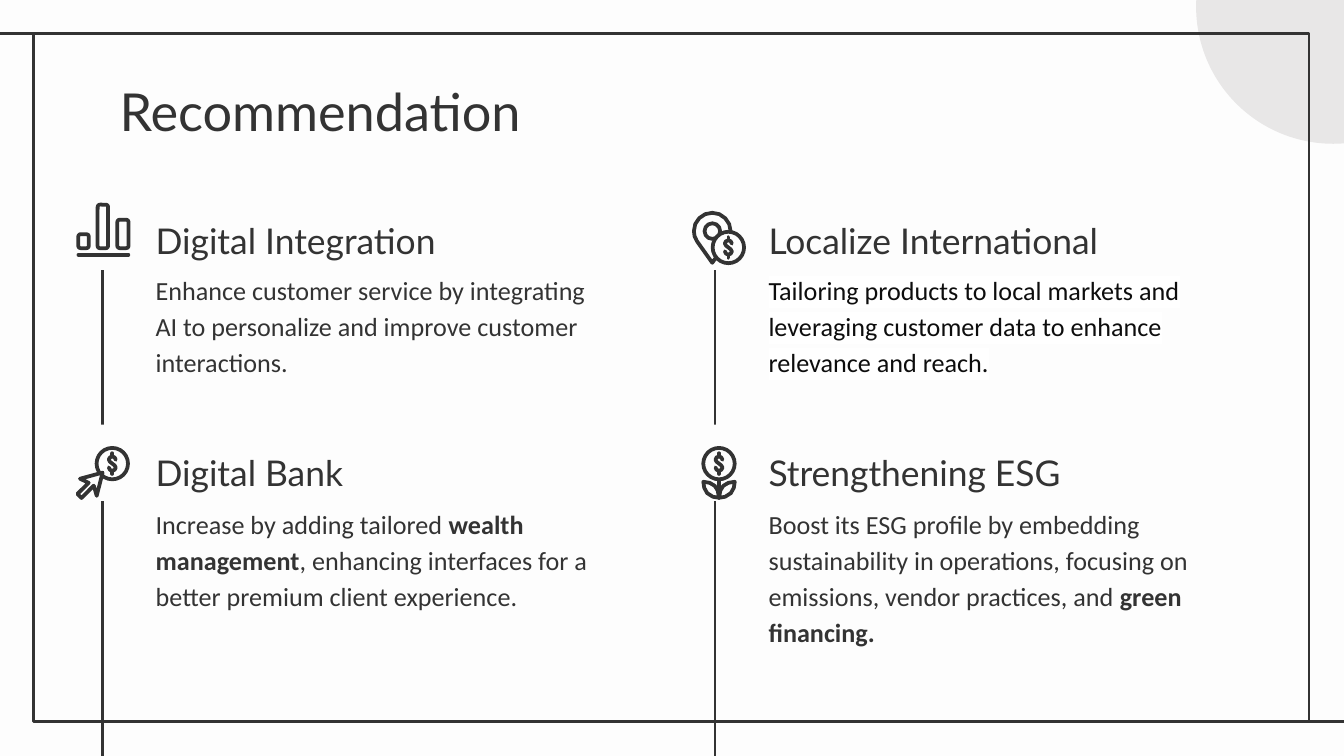
import pptx
import pptx.dml.color
import pptx.enum.shapes
import pptx.enum.text
import pptx.oxml.ns
import pptx.util
from lxml import etree

PX = 9144  # EMU in one px: 100 px make an inch
CELL = PX // 10  # icons are drawn in tenths of a px
WIDTH = 1000
HEIGHT = WIDTH * 9 / 16
COLORS = {"ink": "333333", "paper": "FDFDFD", "corner": "E8E7E7",
          "dark": "0D0D0D", "white": "FFFFFF"}
SHAPE = pptx.enum.shapes.MSO_SHAPE
ANCHOR = pptx.enum.text.MSO_ANCHOR
COIN_RADIUS = 117
DOLLAR_CURVE = [(26, -28), (18, -46), (0, -54), (-18, -46), (-26, -30), (-18, -14), (0, 0),
                (18, 14), (26, 30), (18, 46), (0, 54), (-18, 46), (-26, 28)]


def emu(*lengths):
    return [pptx.util.Emu(round(length * PX)) for length in lengths]


def rgb(name):
    return pptx.dml.color.RGBColor.from_string(COLORS[name])


def tag(name):
    return pptx.oxml.ns.qn(name)


def paint(shape, fill=None, line=None, weight=1.5):
    shape.shadow.inherit = False
    if fill:
        shape.fill.solid()
        shape.fill.fore_color.rgb = rgb(fill)
    else:
        shape.fill.background()
    if line:
        shape.line.color.rgb = rgb(line)
        shape.line.width = pptx.util.Pt(weight)
    else:
        shape.line.fill.background()


def add_line(page, x1, y1, x2, y2):
    line = page.shapes.add_connector(pptx.enum.shapes.MSO_CONNECTOR.STRAIGHT,
                                     *emu(x1, y1, x2, y2))
    line.line.color.rgb = rgb("ink")
    line.line.width = pptx.util.Pt(1.5)
    etree.SubElement(line._element.spPr, tag("a:effectLst"))


def write(box, text, font, size, color="ink", spacing=1.0, anchor=ANCHOR.TOP, highlight=None):
    """Fill a box with one paragraph; text between ** marks is bold."""
    frame = box.text_frame
    frame.word_wrap = True
    frame.auto_size = pptx.enum.text.MSO_AUTO_SIZE.NONE
    frame.vertical_anchor = anchor
    frame.margin_left = frame.margin_right = frame.margin_top = frame.margin_bottom = emu(10)[0]
    para = frame.paragraphs[0]
    para.alignment = pptx.enum.text.PP_ALIGN.LEFT
    para.line_spacing = spacing
    for index, part in enumerate(text.split("**")):
        if not part:
            continue
        span = para.add_run()
        span.text = part
        span.font.name = font
        span.font.size = pptx.util.Pt(size)
        span.font.bold = index % 2 == 1
        span.font.color.rgb = rgb(color)
        if highlight:
            mark = etree.Element(tag("a:highlight"))
            etree.SubElement(mark, tag("a:srgbClr"), val=COLORS[highlight])
            span._r.rPr.find(tag("a:latin")).addprevious(mark)


def add_text(page, x, y, width, height, text, **style):
    write(page.shapes.add_textbox(*emu(x, y, width, height)), text, **style)


class Icon:
    """Line art placed from a left top corner, in tenths of a px."""

    def __init__(self, page, x, y):
        self.shapes = page.shapes
        self.x, self.y = emu(x, y)

    def ink(self, shape, fill):
        paint(shape, fill, "ink", weight=2)
        outline = shape.line._get_or_add_ln()
        outline.set("cap", "rnd")
        etree.SubElement(outline, tag("a:round"))

    def stroke(self, points, close=False, fill=None):
        builder = self.shapes.build_freeform(*points[0], scale=CELL)
        builder.add_line_segments(points[1:], close=close)
        self.ink(builder.convert_to_shape(self.x, self.y), fill)

    def preset(self, kind, x, y, width, height, fill=None):
        shape = self.shapes.add_shape(kind, self.x + x * CELL, self.y + y * CELL,
                                      width * CELL, height * CELL)
        self.ink(shape, fill)
        return shape

    def circle(self, x, y, radius, fill=None):
        self.preset(SHAPE.OVAL, x - radius, y - radius, 2 * radius, 2 * radius, fill)

    def coin(self, x, y):
        self.circle(x, y, COIN_RADIUS, "paper")
        self.stroke([(x + dx, y + dy) for dx, dy in DOLLAR_CURVE])
        for side in (-1, 1):
            self.stroke([(x, y + side * 54), (x, y + side * 77)])


def draw_bars(icon):
    icon.stroke([(14, 386), (386, 386)])
    for x, y, width in ((13, 233, 78), (157, 13, 78), (303, 125, 84)):
        bar = icon.preset(SHAPE.ROUNDED_RECTANGLE, x, y, width, 337 - y)
        bar.adjustments[0] = 0.22


def draw_pin(icon):
    icon.stroke([(150, 386), (36, 226), (18, 188), (13, 150), (23, 98), (53, 54), (98, 24),
                 (150, 14), (202, 24), (246, 54), (276, 98), (286, 150), (264, 226)], close=True)
    icon.circle(150, 150, 58)
    icon.coin(270, 272)


def draw_cursor(icon):
    icon.coin(276, 130)
    icon.stroke([(203, 197), (35, 243), (100, 273), (16, 356), (46, 386), (138, 294), (160, 370)],
                close=True, fill="paper")


def draw_plant(icon):
    icon.coin(130, 130)
    icon.stroke([(130, 250), (130, 384)])
    leaf = [(-117, 265), (-70, 273), (-32, 295), (-10, 330), (0, 384),
            (-45, 377), (-88, 350), (-110, 310)]
    for side in (-1, 1):
        icon.stroke([(130 + side * x, y) for x, y in leaf], close=True)


def draw_frame(page):
    corner = page.shapes.add_shape(SHAPE.OVAL, *emu(890, -97, 204, 204))
    paint(corner, "corner")
    border = page.shapes.add_shape(SHAPE.RECTANGLE, *emu(25, 25, 949, 512))
    paint(border, line="ink")
    add_line(page, 26, 25, -2, 25)
    add_line(page, 1003, 537, 974, 537)


def draw_item(page, x, y, item):
    """One recommendation, placed from the left of its text and the top of its heading."""
    tile = page.shapes.add_shape(SHAPE.RECTANGLE, *emu(x - 58, y - 22, 56, 56))
    paint(tile, "paper")
    add_line(page, x - 30, y + 35, x - 30, item["stem_end"])
    dx, dy = item["icon_at"]
    item["icon"](Icon(page, x + dx, y + dy))
    add_text(page, x, y, 294, 39, item["heading"], font="Lato", size=19,
             spacing=1.15, anchor=ANCHOR.BOTTOM)
    add_text(page, x, y + item["drop"], item["width"], 100, item["body"], font="Calibri",
             size=14, spacing=1.15, **item.get("style", {}))


ITEMS = [
    {"heading": "Digital Integration", "icon": draw_bars, "icon_at": (-49, -15),
     "stem_end": 316, "drop": 25, "width": 343,
     "body": "Enhance customer service by integrating AI to personalize and improve "
             "customer interactions."},
    {"heading": "Localize International", "icon": draw_pin, "icon_at": (-47, -9),
     "stem_end": 316, "drop": 25, "width": 360,
     "style": {"color": "dark", "highlight": "white"},
     "body": "Tailoring products to local markets and leveraging customer data to enhance "
             "relevance and reach."},
    {"heading": "Digital Bank", "icon": draw_cursor, "icon_at": (-50, -6),
     "stem_end": 567, "drop": 27, "width": 343,
     "body": "Increase by adding tailored **wealth management**, enhancing interfaces for a "
             "better premium client experience."},
    {"heading": "Strengthening ESG", "icon": draw_plant, "icon_at": (-40, -6),
     "stem_end": 567, "drop": 27, "width": 378,
     "body": "Boost its ESG profile by embedding sustainability in operations, focusing on "
             "emissions, vendor practices, and **green financing.**"},
]


def main():
    deck = pptx.Presentation()
    deck.slide_width, deck.slide_height = emu(WIDTH, HEIGHT)
    page = deck.slides.add_slide(deck.slide_layouts[5])
    page.background.fill.solid()
    page.background.fill.fore_color.rgb = rgb("paper")
    draw_frame(page)
    title = page.shapes.title
    title.left, title.top, title.width, title.height = emu(79, 49, 843, 63)
    write(title, "Recommendation", font="Lato", size=28)
    for index, item in enumerate(ITEMS):
        row, column = divmod(index, 2)
        draw_item(page, 106 + column * 456, 166 + row * 172, item)
    deck.save("out.pptx")


if __name__ == "__main__":
    main()
